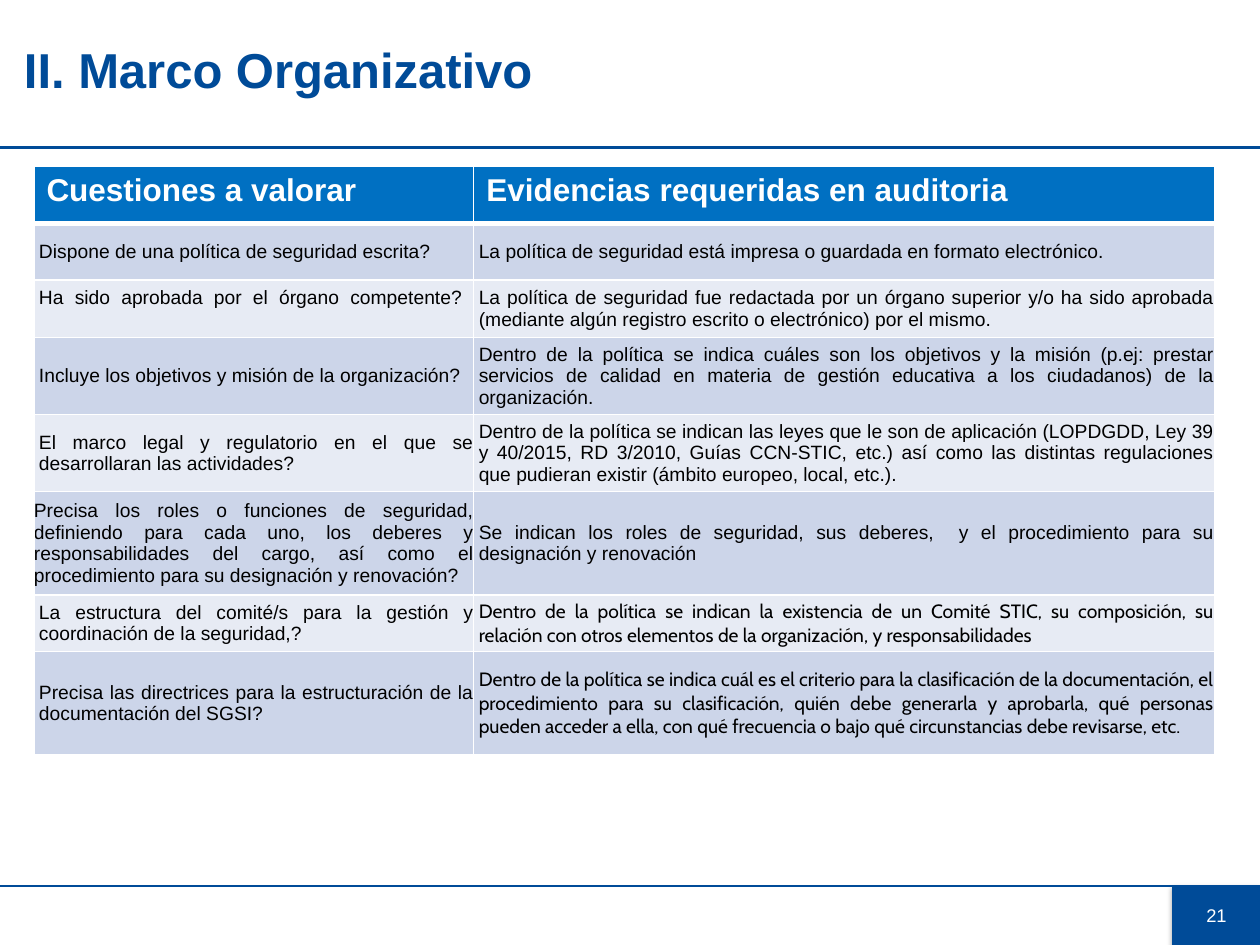
from lxml import etree
from pptx import Presentation
from pptx.dml.color import RGBColor
from pptx.enum.shapes import MSO_CONNECTOR, MSO_SHAPE
from pptx.enum.text import MSO_ANCHOR, PP_ALIGN
from pptx.oxml import parse_xml
from pptx.oxml.ns import nsdecls, qn
from pptx.util import Pt

STRAIGHT = MSO_CONNECTOR.STRAIGHT
RECTANGLE = MSO_SHAPE.RECTANGLE
MIDDLE = MSO_ANCHOR.MIDDLE
LEFT, CENTER, JUSTIFY = PP_ALIGN.LEFT, PP_ALIGN.CENTER, PP_ALIGN.JUSTIFY

NAVY = RGBColor(0x00, 0x4B, 0x98)
BLUE = RGBColor(0x00, 0x70, 0xC2)
BAND_DARK = RGBColor(0xCC, 0xD5, 0xE9)
BAND_LIGHT = RGBColor(0xE7, 0xEB, 0xF4)
WHITE = RGBColor(0xFF, 0xFF, 0xFF)
BLACK = RGBColor(0x00, 0x00, 0x00)

PAGE_WIDTH, PAGE_HEIGHT = 720, 540
COLUMN_WIDTHS = (251.3, 423.4)
ROW_HEIGHTS = (32.4, 32.4, 33, 44, 44, 59, 32.4, 59)
HEADINGS = ("Cuestiones a valorar", "Evidencias requeridas en auditoria")
FLUSH_QUESTION = 5
CABIN_FROM = 6

ROWS = (
    ("Dispone de una política de seguridad escrita? ",
     "La política de seguridad está impresa o guardada en formato electrónico."),
    ("Ha sido aprobada por el órgano competente? \v",
     "La política de seguridad fue redactada por un órgano superior y/o ha sido "
     "aprobada (mediante algún registro escrito o electrónico) por el mismo. "),
    ("Incluye los objetivos y misión de la organización?",
     "Dentro de la política se indica cuáles son los objetivos y la misión (p.ej: "
     "prestar servicios de calidad en materia de gestión educativa a los "
     "ciudadanos) de la organización."),
    ("El marco legal y regulatorio en el que se desarrollaran las actividades?",
     "Dentro de la política se indican las leyes que le son de aplicación (LOPDGDD, "
     "Ley 39 y 40/2015, RD 3/2010, Guías CCN-STIC, etc.) así como las distintas "
     "regulaciones que pudieran existir (ámbito europeo, local, etc.)."),
    ("Precisa los roles o funciones de seguridad, definiendo para cada uno, los "
     "deberes y responsabilidades del cargo, así como el procedimiento para su "
     "designación y renovación?",
     "Se indican los roles de seguridad, sus deberes,  y el procedimiento para su "
     "designación y renovación"),
    ("La estructura del comité/s para la gestión y coordinación de la seguridad,?",
     "Dentro de la política se indican la existencia de un Comité STIC, su "
     "composición, su relación con otros elementos de la organización, y "
     "responsabilidades"),
    ("Precisa las directrices para la estructuración de la documentación del SGSI?",
     "Dentro de la política se indica cuál es el criterio para la clasificación de "
     "la documentación, el procedimiento para su clasificación, quién debe "
     "generarla y aprobarla, qué personas pueden acceder a ella, con qué frecuencia "
     "o bajo qué circunstancias debe revisarse, etc."),
)


def style_paragraph(para, size, color, align, bold=False, name="Arial"):
    para.alignment = align
    para.font.name = name
    para.font.size = Pt(size)
    para.font.bold = bold
    para.font.color.rgb = color


def add_rule(page, y):
    rule = page.shapes.add_connector(STRAIGHT, Pt(0), Pt(y), Pt(PAGE_WIDTH), Pt(y))
    rule.line.color.rgb = NAVY
    rule.line.width = Pt(1.5)
    etree.SubElement(rule._element.spPr, qn("a:effectLst"))


def add_title(page, left, top, width, height):
    title = page.shapes.title
    title.left, title.top = Pt(left), Pt(top)
    title.width, title.height = Pt(width), Pt(height)
    frame = title.text_frame
    frame.word_wrap = True
    frame.vertical_anchor = MIDDLE
    frame.margin_left = frame.margin_right = Pt(0)
    frame.text = "II. Marco Organizativo"
    para = frame.paragraphs[0]
    para.line_spacing = 0.9
    style_paragraph(para, 28, NAVY, LEFT, bold=True)
    add_rule(page, 84.2)


def add_footer(page, left, top, width, height):
    box = page.shapes.add_shape(RECTANGLE, Pt(left), Pt(top), Pt(width), Pt(height))
    box.fill.solid()
    box.fill.fore_color.rgb = NAVY
    box.line.color.rgb = NAVY
    box.line.width = Pt(0.75)
    box._element.spPr.append(parse_xml(
        f'<a:effectLst {nsdecls("a")}><a:outerShdw blurRad="{Pt(3.1)}" '
        f'dist="{Pt(1.8)}" dir="5400000" rotWithShape="0"><a:srgbClr val="000000">'
        '<a:alpha val="35000"/></a:srgbClr></a:outerShdw></a:effectLst>'))
    box.text_frame.vertical_anchor = MIDDLE
    box.text_frame.text = "21"
    style_paragraph(box.text_frame.paragraphs[0], 10.5, WHITE, CENTER)
    add_rule(page, top)


def set_borders(cell, top, bottom):
    properties = cell._tc.get_or_add_tcPr()
    for side, width in (("L", 1), ("R", 1), ("T", top), ("B", bottom)):
        properties.append(parse_xml(
            f'<a:ln{side} {nsdecls("a")} w="{Pt(width)}"><a:solidFill>'
            f'<a:srgbClr val="{WHITE}"/></a:solidFill></a:ln{side}>'))


def fill_cell(cell, text, color):
    cell.fill.solid()
    cell.fill.fore_color.rgb = color
    cell.text = text
    return cell.text_frame.paragraphs[0]


def add_questions(page, left, top):
    table = page.shapes.add_table(
        len(ROW_HEIGHTS), len(COLUMN_WIDTHS), Pt(left), Pt(top),
        Pt(sum(COLUMN_WIDTHS)), Pt(sum(ROW_HEIGHTS))).table
    for column, width in zip(table.columns, COLUMN_WIDTHS):
        column.width = Pt(width)
    for row, height in zip(table.rows, ROW_HEIGHTS):
        row.height = Pt(height)

    for cell, heading in zip(table.rows[0].cells, HEADINGS):
        set_borders(cell, 1, 3)
        style_paragraph(fill_cell(cell, heading, BLUE), 18, WHITE, LEFT, bold=True)

    for number, texts in enumerate(ROWS, start=1):
        band = BAND_DARK if number % 2 else BAND_LIGHT
        for column, text in enumerate(texts):
            cell = table.cell(number, column)
            set_borders(cell, 3 if number == 1 else 1, 1)
            cell.vertical_anchor = MIDDLE
            cell.margin_left = cell.margin_right = Pt(0)
            cell.margin_top = cell.margin_bottom = Pt(0)
            para = fill_cell(cell, text, band)
            if (number, column) != (FLUSH_QUESTION, 0):
                para._p.get_or_add_pPr().set("marL", str(Pt(2.9)))
            name = "Cabin" if column == 1 and number >= CABIN_FROM else "Arial"
            style_paragraph(para, 11, BLACK, JUSTIFY, name=name)


def main():
    deck = Presentation()
    deck.slide_width, deck.slide_height = Pt(PAGE_WIDTH), Pt(PAGE_HEIGHT)
    page = deck.slides.add_slide(deck.slide_layouts[5])
    add_title(page, 13.7, 0, 686, 83.5)
    add_footer(page, 670.3, 506.2, 49.7, 33.8)
    add_questions(page, 19.4, 95.2)
    deck.save("out.pptx")


if __name__ == "__main__":
    main()
